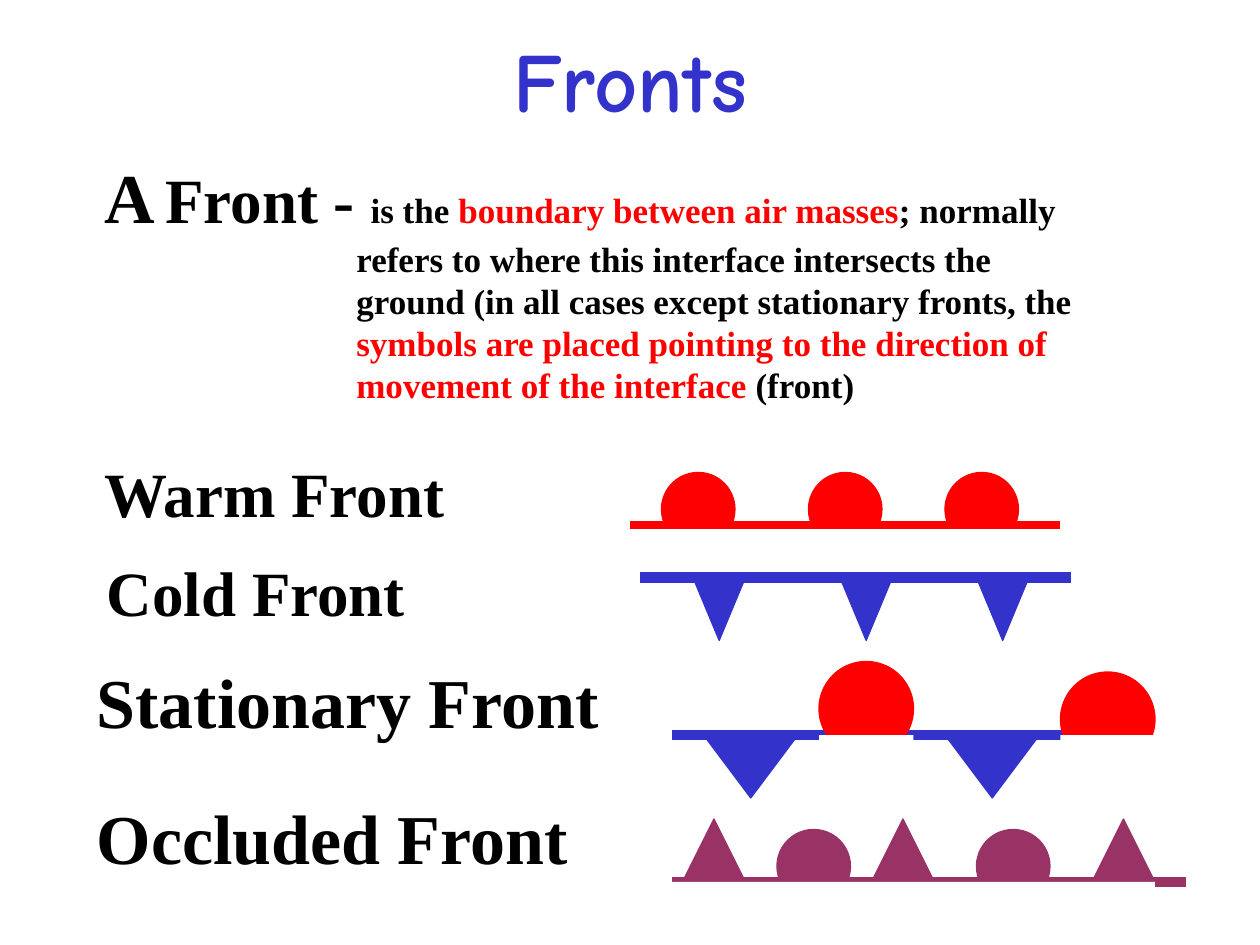
from pptx import Presentation
from pptx.dml.color import RGBColor
from pptx.enum.shapes import MSO_CONNECTOR, MSO_SHAPE as SHAPE
from pptx.enum.text import MSO_ANCHOR, MSO_AUTO_SIZE, PP_ALIGN
from pptx.oxml.ns import qn
from pptx.util import Inches, Pt
from lxml.etree import SubElement

COLORS = {"blue": "3333CC", "red": "FF0000", "purple": "993366",
          "black": "000000", "white": "FFFFFF"}
SERIF = "Times New Roman"
UNIT = 1 / 12  # the drawings sit on a grid of twelfths of an inch

# text, left, top, width, height in inches, size
LABELS = [
    ("Warm Front", 0.73, 3.56, 3.15, 0.7, 36),
    ("Cold Front", 0.75, 4.34, 2.72, 0.7, 36),
    ("Stationary Front", 0.67, 5.18, 4.73, 0.77, 40),
    ("Occluded Front", 0.67, 6.26, 4.31, 0.77, 40),
]
DEFINITION = [
    [("A", 40, "black"), (" ", 24, "black"), ("Front - ", 36, "black"),
     ("is the ", 20, "black"), ("boundary between air masses", 20, "red"),
     ("; normally", 20, "black")],
    [("refers to where this interface intersects the", 20, "black")],
    [("ground (in all cases except stationary fronts, the", 20, "black")],
    [("symbols are placed pointing to the direction of", 20, "red")],
    [("movement of the interface", 20, "red"), (" (front)", 20, "black")],
]

# Grid units. line: left, right, y, colour, points
# symbols: shape, colour, width, height, corners; masks: left, top, width, height
FRONTS = [
    {"symbols": [(SHAPE.OVAL, "red", 7, 7, [(63, 45), (77, 45), (90, 45)])],
     "masks": [(57, 50, 41, 3)],
     "line": (60, 101, 50, "red", 4.5), "line_on_top": True},
    {"symbols": [(SHAPE.FLOWCHART_MERGE, "blue", 5, 6, [(66, 55), (80, 55), (93, 55)])],
     "masks": [],
     "line": (61, 102, 55, "blue", 6), "line_on_top": False},
    {"symbols": [(SHAPE.FLOWCHART_MERGE, "blue", 9, 6, [(67, 70), (90, 70)]),
                 (SHAPE.OVAL, "red", 9, 9, [(78, 63), (101, 64)])],
     "masks": [(78, 70, 9, 3), (101, 70, 10, 4)],
     "line": (64, 108, 70, "blue", 6), "line_on_top": False},
    {"symbols": [(SHAPE.ISOSCELES_TRIANGLE, "purple", 6, 6, [(65, 78), (83, 78), (104, 78)]),
                 (SHAPE.OVAL, "purple", 7, 7, [(74, 79), (93, 79)])],
     "masks": [(59, 84, 51, 6)],
     "line": (64, 113, 84, "purple", 6), "line_on_top": False},
]


def rgb(name):
    return RGBColor.from_string(COLORS[name])


def grid(*units):
    return [Inches(u * UNIT) for u in units]


def add_text(s, box, paragraphs, font=SERIF, hang=0, wrap=False):
    """Add bold text; paragraphs after the first are indented by hang inches."""
    tf = s.shapes.add_textbox(*map(Inches, box)).text_frame
    tf.word_wrap = wrap
    tf.auto_size = MSO_AUTO_SIZE.NONE if wrap else MSO_AUTO_SIZE.SHAPE_TO_FIT_TEXT
    for i, runs in enumerate(paragraphs):
        p = tf.add_paragraph() if i else tf.paragraphs[0]
        if i and hang:
            p._p.get_or_add_pPr().set("marL", str(Inches(hang)))
        for text, size, color in runs:
            r = p.add_run()
            r.text = text
            for key, value in {"name": font, "size": Pt(size), "bold": True}.items():
                setattr(r.font, key, value)
            r.font.color.rgb = rgb(color)
    return tf


def add_shape(s, kind, box, color, outlined=True):
    sp = s.shapes.add_shape(kind, *grid(*box))
    sp.shadow.inherit = False
    sp.fill.solid()
    sp.fill.fore_color.rgb = rgb(color)
    if outlined:
        sp.line.color.rgb = rgb(color)
        sp.line.width = Pt(0.75)
    else:
        sp.line.fill.background()


def add_line(s, left, right, y, color, points):
    line = s.shapes.add_connector(MSO_CONNECTOR.STRAIGHT, *grid(left, y, right, y))
    line.line.color.rgb = rgb(color)
    line.line.width = Pt(points)
    SubElement(line._element.spPr, qn("a:effectLst"))


def add_front(s, front):
    if not front["line_on_top"]:
        add_line(s, *front["line"])
    for kind, color, w, h, corners in front["symbols"]:
        for x, y in corners:
            add_shape(s, kind, (x, y, w, h), color)
    for box in front["masks"]:
        add_shape(s, SHAPE.RECTANGLE, box, "white", outlined=False)
    if front["line_on_top"]:
        add_line(s, *front["line"])


def main():
    prs = Presentation()
    prs.slide_width, prs.slide_height = Inches(10), Inches(7.5)
    s = prs.slides.add_slide(prs.slide_layouts[6])
    title = add_text(s, (0.75, 0, 8.5, 1.25), [[("Fronts", 48, "blue")]],
                     font="Comic Neue", wrap=True)
    title.vertical_anchor = MSO_ANCHOR.MIDDLE
    title.paragraphs[0].alignment = PP_ALIGN.CENTER
    add_text(s, (0.73, 1.17, 8.94, 2.1), DEFINITION, hang=2)
    for text, *box, size in LABELS:
        add_text(s, box, [[(text, size, "black")]])
    for front in FRONTS:
        add_front(s, front)
    prs.save("out.pptx")


if __name__ == "__main__":
    main()
